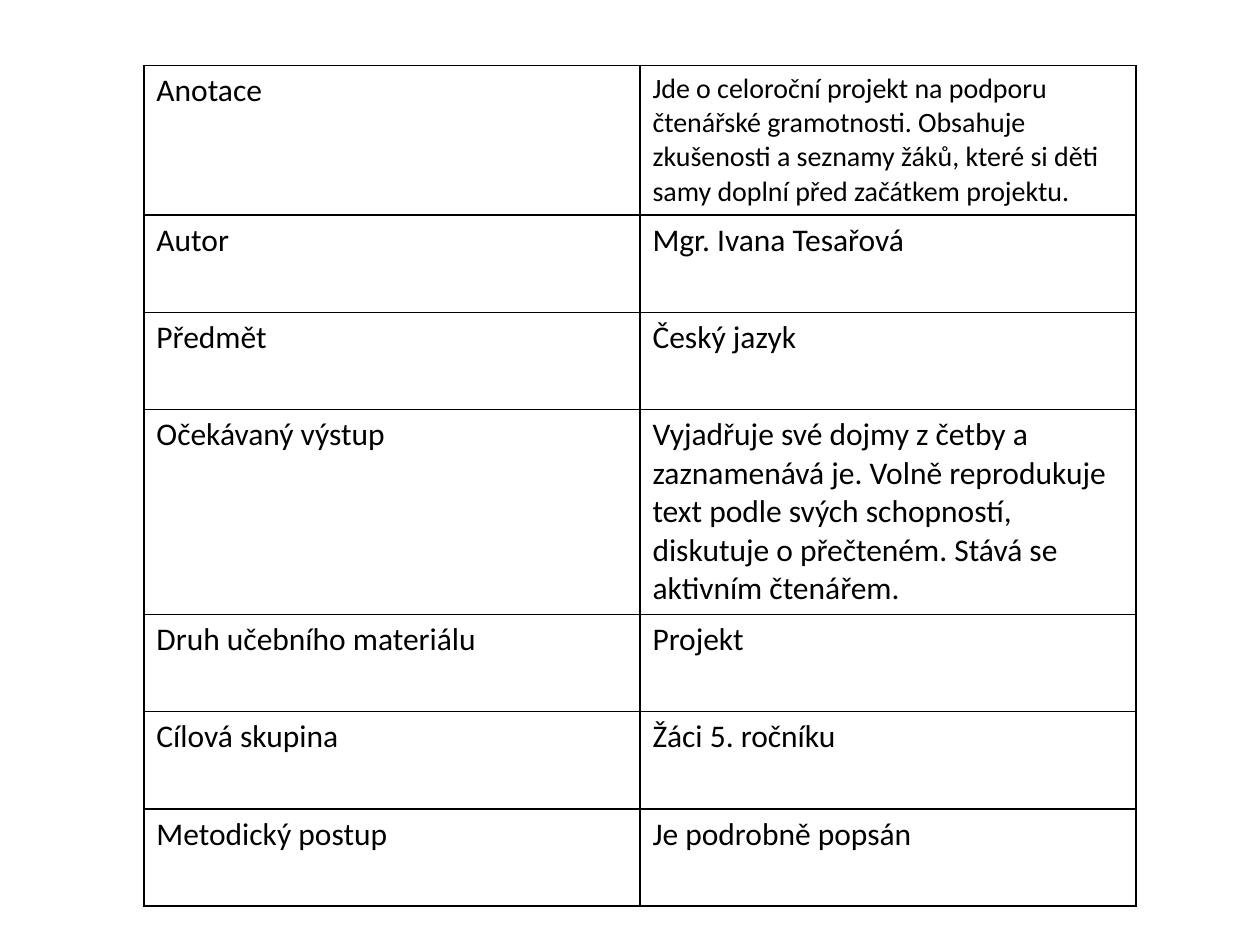
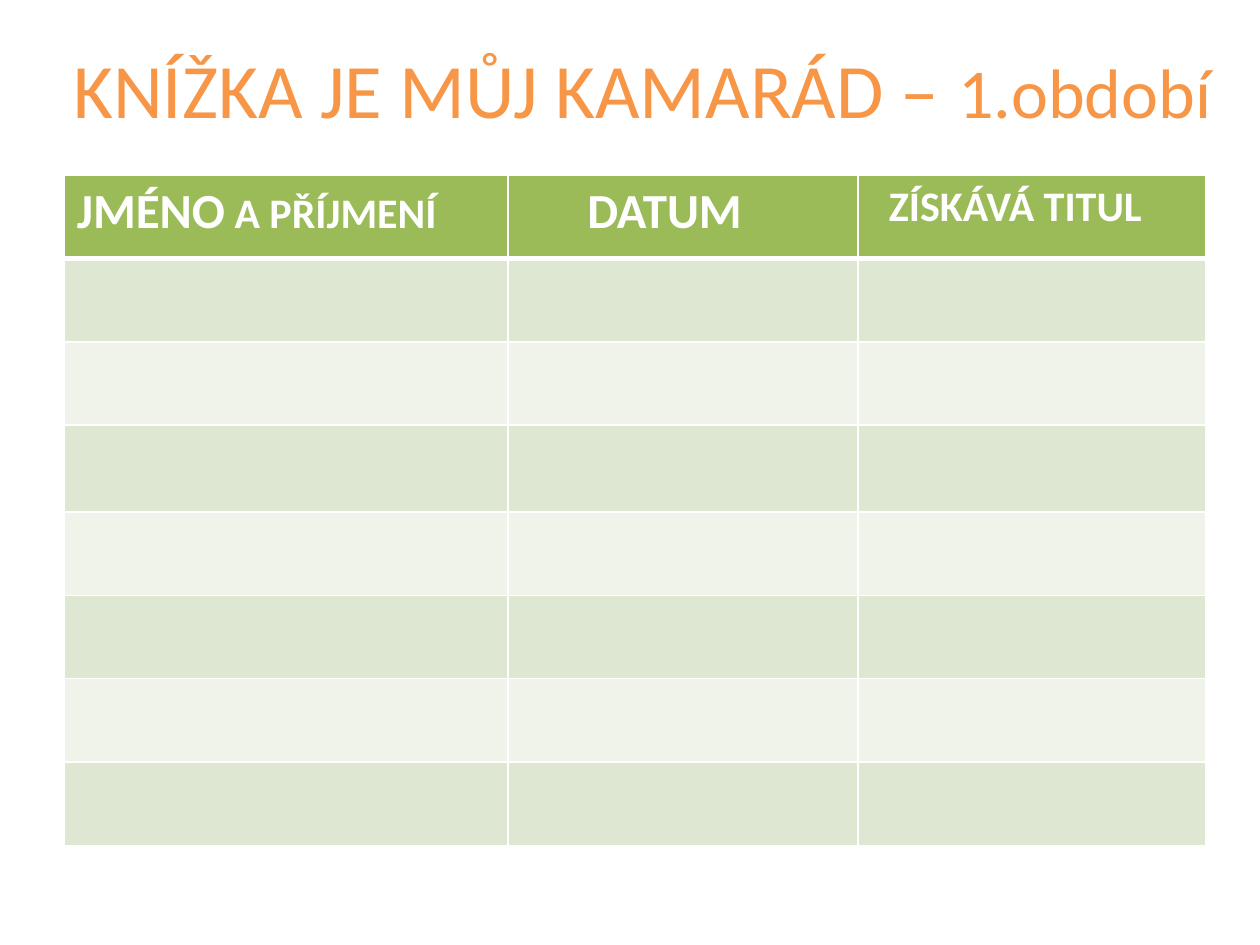
from pptx import Presentation
from pptx.dml.color import RGBColor
from pptx.enum import text as t
from pptx.oxml import parse_xml
from pptx.oxml.ns import nsdecls
from pptx.util import Cm, Pt

# Content: a cell is a list of (text, type size) runs
ANNOTATION = [
    ("Anotace", "Jde o celoroční projekt na podporu čtenářské gramotnosti. Obsahuje "
                "zkušenosti a seznamy žáků, které si děti samy doplní před začátkem projektu."),
    ("Autor", "Mgr. Ivana Tesařová"),
    ("Předmět", "Český jazyk"),
    ("Očekávaný výstup", "Vyjadřuje své dojmy z četby a zaznamenává je. Volně reprodukuje "
                         "text podle svých schopností, diskutuje o přečteném. "
                         "Stává se aktivním čtenářem."),
    ("Druh učebního materiálu", "Projekt"),
    ("Cílová skupina", "Žáci 5. ročníku"),
    ("Metodický postup", "Je podrobně popsán"),
]
READING_TITLE = [("KNÍŽKA JE MŮJ KAMARÁD – ", "title"), ("1.období", "period")]
READING_HEADER = [
    [("JMÉNO", "header"), (" A PŘÍJMENÍ", "header_small")],
    [("DATUM", "header")],
    [("ZÍSKÁVÁ TITUL", "header_small")],
]
READER_ROWS = 7

# Theme
THEME = {
    "font": "Calibri",
    "colors": {"ink": "000000", "paper": "FFFFFF", "title": "F79646",
               "header": "9BBB59", "bands": ("DEE7D1", "EFF3EA")},
    "sizes": {"title": 44, "period": 40, "header": 28, "header_small": 24,
              "body": 18, "summary": 16},
}
COLORS = THEME["colors"]

# Layout in centimetres
ANNOTATION_AT = (2.9, 1.32)
ANNOTATION_COLS = [10, 10]
ANNOTATION_ROWS = [2.87, 1.96, 1.96, 3.94, 1.96, 1.96, 1.96]
READING_AT = (1.3, 3.53)
READING_COLS = [8.94, 7.06, 7.01]
READING_ROWS = [1.68] * 3 + [1.75] + [1.68] * 4
HEADER_INDENTS = [0.25, 1.6, 0.62]
TITLE_BOX = {"left": Cm(1.22), "top": Cm(0.71), "width": Cm(23.6), "height": Cm(2.13)}


def set_all(target, values):
    for name, value in values.items():
        setattr(target, name, value)


def write_runs(paragraph, runs, color, bold=False):
    for words, size in runs:
        run = paragraph.add_run()
        run.text = words
        set_all(run.font, {"name": THEME["font"], "bold": bold,
                           "size": Pt(THEME["sizes"][size])})
        run.font.color.rgb = RGBColor.from_string(color)


def set_borders(cell, color, **widths):
    for side in "LRTB":
        cell._tc.get_or_add_tcPr().append(parse_xml(
            f'<a:ln{side} {nsdecls("a")} w="{Pt(widths.get(side, 1))}"><a:solidFill>'
            f'<a:srgbClr val="{color}"/></a:solidFill></a:ln{side}>'))


def add_grid(slide, at, cols, rows):
    left, top = at
    grid = slide.shapes.add_table(len(rows), len(cols), Cm(left), Cm(top),
                                  Cm(sum(cols)), Cm(sum(rows))).table
    set_all(grid, {"first_row": False, "horz_banding": False})
    for column, width in zip(grid.columns, cols):
        column.width = Cm(width)
    for row, height in zip(grid.rows, rows):
        row.height = Cm(height)
    return grid


def build_annotation(prs):
    slide = prs.slides.add_slide(prs.slide_layouts[6])
    grid = add_grid(slide, ANNOTATION_AT, ANNOTATION_COLS, ANNOTATION_ROWS)
    for r, entry in enumerate(ANNOTATION):
        for c, words in enumerate(entry):
            cell = grid.cell(r, c)
            set_borders(cell, COLORS["ink"])
            cell.fill.background()
            size = "summary" if (r, c) == (0, 1) else "body"
            write_runs(cell.text_frame.paragraphs[0], [(words, size)], COLORS["ink"])


def build_reading(prs):
    slide = prs.slides.add_slide(prs.slide_layouts[5])

    # Title
    title = slide.shapes.title
    set_all(title, TITLE_BOX)
    set_all(title.text_frame, {"word_wrap": False, "auto_size": t.MSO_AUTO_SIZE.NONE,
                               "vertical_anchor": t.MSO_ANCHOR.MIDDLE})
    heading = title.text_frame.paragraphs[0]
    heading.alignment = t.PP_ALIGN.LEFT
    write_runs(heading, READING_TITLE, COLORS["title"])

    # Header row above banded rows for the readers
    grid = add_grid(slide, READING_AT, READING_COLS, READING_ROWS)
    for r in range(READER_ROWS + 1):
        fill = COLORS["bands"][(r - 1) % 2] if r else COLORS["header"]
        edges = {0: {"B": 3}, 1: {"T": 3}}.get(r, {})
        for c in range(len(READING_COLS)):
            cell = grid.cell(r, c)
            set_borders(cell, COLORS["paper"], **edges)
            cell.fill.solid()
            cell.fill.fore_color.rgb = RGBColor.from_string(fill)
    for c, (runs, indent) in enumerate(zip(READING_HEADER, HEADER_INDENTS)):
        cell = grid.cell(0, c)
        cell.margin_left = Cm(indent)
        write_runs(cell.text_frame.paragraphs[0], runs, COLORS["paper"], bold=True)


def main():
    prs = Presentation()
    set_all(prs, {"slide_width": Cm(25.4), "slide_height": Cm(19.05)})
    build_annotation(prs)
    build_reading(prs)
    prs.save("out.pptx")


if __name__ == "__main__":
    main()
